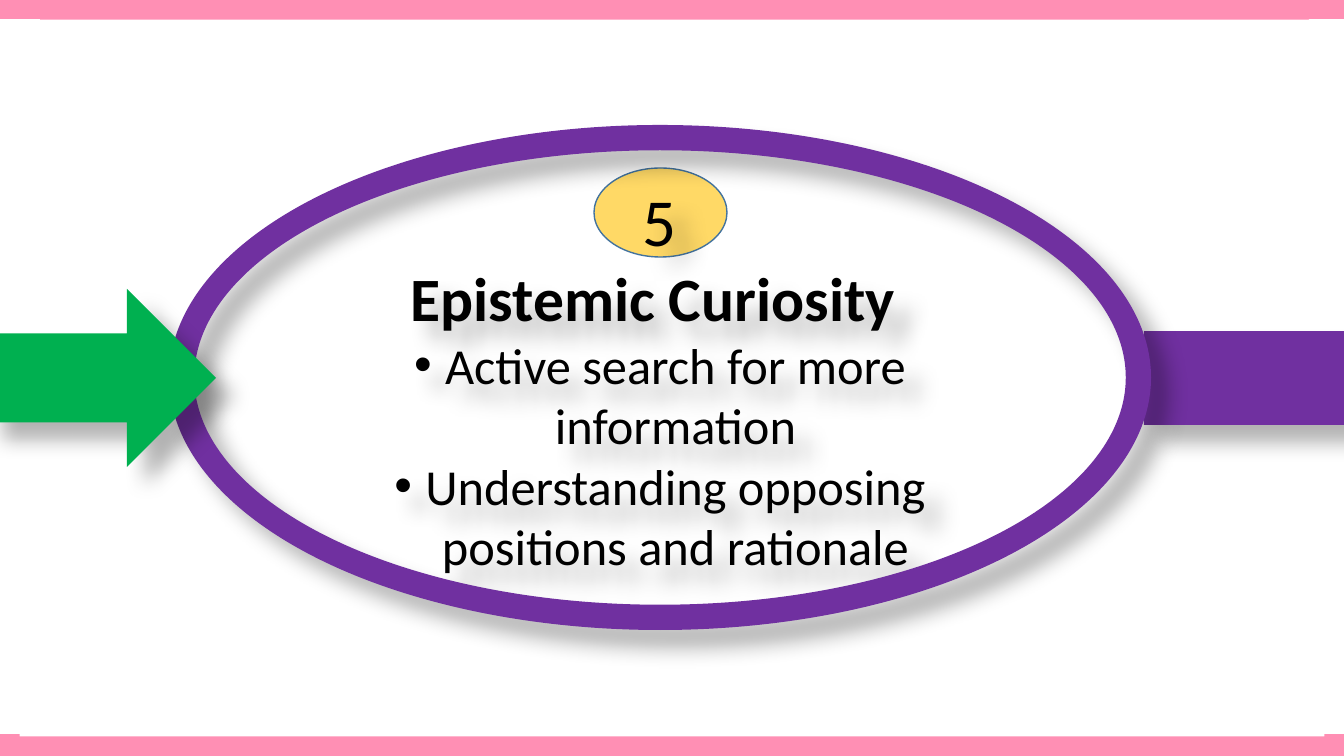
from dataclasses import dataclass

from lxml.etree import SubElement as Sub
from pptx import Presentation
from pptx.dml.color import RGBColor as Rgb
from pptx.enum.shapes import MSO_SHAPE as Kind
from pptx.enum.text import MSO_ANCHOR as Anchor, PP_ALIGN as Align
from pptx.oxml.ns import qn
from pptx.util import Emu, Pt

SCALE = 914400 / 100.8  # EMU in one px
WIDE, HIGH = 1344, 756


def px(n):
    return Emu(round(n * SCALE))


@dataclass(frozen=True)
class Theme:
    font: str = "Calibri"
    pink: str = "FF8FB4"
    white: str = "FFFFFF"
    purple: str = "7030A0"
    gold: str = "FFD966"
    edge: str = "43739E"
    green: str = "00B050"
    ink: str = "000000"
    number: int = 48
    head: int = 44
    body: int = 36


def write(para, text, font, size, color, bold=False, bullet=False):
    """Fill one centred paragraph, with a hanging bullet if asked."""
    para.alignment = Align.CENTER
    run = para.add_run()
    run.text = text
    run.font.name, run.font.size, run.font.bold = font, Pt(size), bold
    run.font.color.rgb = Rgb.from_string(color)
    if bullet:
        props = para._p.get_or_add_pPr()
        props.set("marL", str(px(31)))
        props.set("indent", str(-px(31)))
        Sub(props, qn("a:buFont"), typeface="Arial")
        Sub(props, qn("a:buChar"), char="•")


class Deck:
    def __init__(self, theme):
        self.theme = theme
        self.prs = Presentation()
        self.prs.slide_width, self.prs.slide_height = px(WIDE), px(HIGH)
        self.slide = self.prs.slides.add_slide(self.prs.slide_layouts[6])

    def group(self):
        return self.slide.shapes.add_group_shape().shapes

    def shape(self, kind, box, fill, line=None, adj=None, shade=False, home=None):
        home = self.slide.shapes if home is None else home
        item = home.add_shape(kind, *map(px, box))
        item.fill.solid()
        item.fill.fore_color.rgb = Rgb.from_string(fill)
        if line:
            item.line.color.rgb = Rgb.from_string(line)
            item.line.width = Pt(1)
        else:
            item.line.fill.background()
        if adj is not None:
            item.adjustments[0] = adj
        item.shadow.inherit = False
        if shade:
            self.shade(item)
        return item

    def shade(self, item):
        """Soft shadow to the lower right."""
        effects = item._element.spPr.find(qn("a:effectLst"))
        outer = Sub(effects, qn("a:outerShdw"), blurRad=str(Pt(15)),
                    dist=str(Pt(18)), dir=str(45 * 60000),
                    algn="tl", rotWithShape="0")
        color = Sub(outer, qn("a:srgbClr"), val=self.theme.ink)
        Sub(color, qn("a:alpha"), val="30000")

    def text(self, item, lines):
        frame = item.text_frame
        frame.word_wrap = True
        frame.vertical_anchor = Anchor.MIDDLE
        for i, (words, form) in enumerate(lines):
            para = frame.add_paragraph() if i else frame.paragraphs[0]
            write(para, words, font=self.theme.font, color=self.theme.ink, **form)


def main():
    theme = Theme()
    deck = Deck(theme)

    # Pink border, opened at both sides
    deck.shape(Kind.FRAME, (0, 0, WIDE, HIGH), theme.pink, adj=0.026)
    for left in (-9, 1309):
        deck.shape(Kind.RECTANGLE, (left, 19, 49, 715), theme.white)

    # Band leading out to the right
    deck.shape(Kind.RECTANGLE, (1144, 331, 208, 94), theme.purple, shade=True)

    # Numbered stage: badge behind the ring that holds the text
    stage = deck.group()
    deck.shape(Kind.OVAL, (594, 168, 133, 89), theme.gold, line=theme.edge, home=stage)
    ring = deck.shape(Kind.DONUT, (169, 125, 982, 505), theme.purple,
                      adj=0.05, shade=True, home=stage)
    point = dict(size=theme.body, bullet=True)
    deck.text(ring, [
        ("5", dict(size=theme.number)),
        ("Epistemic Curiosity ", dict(size=theme.head, bold=True)),
        ("Active search for more information", point),
        ("Understanding opposing positions and rationale", point),
    ])

    # Arrow coming in from the left
    deck.shape(Kind.RIGHT_ARROW, (-15, 289, 231, 178), theme.green, shade=True)

    deck.prs.save("out.pptx")


if __name__ == "__main__":
    main()
